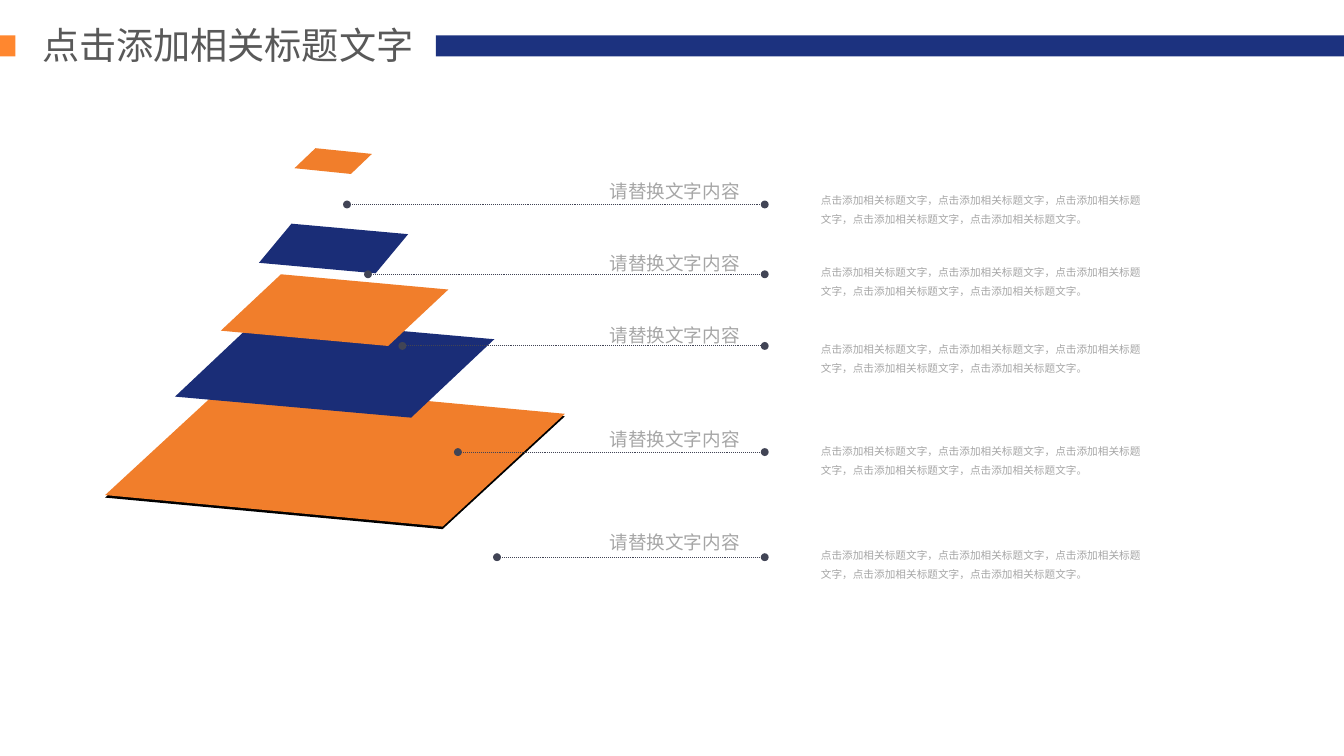
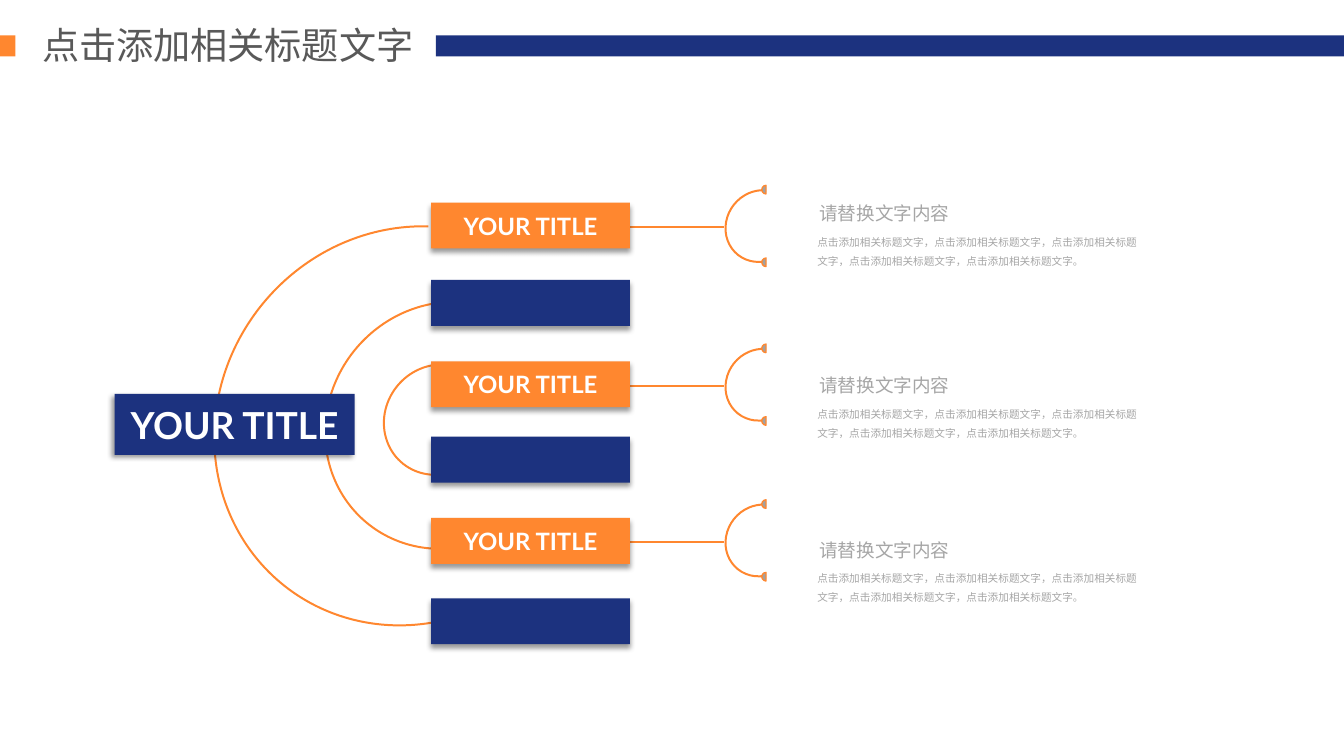
"""Build two slides: a stack of tiles with callouts and a branching title tree."""
from lxml import etree
from pptx import Presentation
from pptx.dml.color import RGBColor
from pptx.enum.dml import MSO_LINE
from pptx.enum.shapes import MSO_CONNECTOR, MSO_SHAPE
from pptx.enum.text import MSO_ANCHOR, MSO_AUTO_SIZE, PP_ALIGN
from pptx.oxml.ns import qn
from pptx.util import Inches, Pt

RECTANGLE, ARC, PIE = MSO_SHAPE.RECTANGLE, MSO_SHAPE.ARC, MSO_SHAPE.PIE
STRAIGHT, DOTTED = MSO_CONNECTOR.STRAIGHT, MSO_LINE.ROUND_DOT
LEFT, CENTER, RIGHT = PP_ALIGN.LEFT, PP_ALIGN.CENTER, PP_ALIGN.RIGHT
TOP, MIDDLE = MSO_ANCHOR.TOP, MSO_ANCHOR.MIDDLE
NO_FIT = MSO_AUTO_SIZE.NONE

COLORS = {
    "navy": "1C327F", "orange": "FF872F", "navy tile": "1A2D77", "orange tile": "F17E2B",
    "edge": "000000", "dots": "414455", "pin": "A1A1A1", "title": "595959",
    "text": "A6A6A6", "white": "FFFFFF",
}
CJK, LATIN, HEADING_FONT = "Noto Sans CJK SC", "Lato", "Arial"
TITLE = "点击添加相关标题文字"
HEADING = "请替换文字内容"
BODY = "，".join([TITLE] * 5) + "。"

deck = Presentation()
deck.slide_width, deck.slide_height = Inches(14.06), Inches(7.91)
COLUMN, ROW = deck.slide_width / 100, deck.slide_height / 100


def add_box(page, kind, left, top, width, height, fill=None, line=None, weight=1.5, shadow=None):
    """Place a shape, or a text box when kind is None, in percent of the slide."""
    area = [round(n) for n in (left * COLUMN, top * ROW, width * COLUMN, height * ROW)]
    if kind is None:
        return page.shapes.add_textbox(*area)
    box = page.shapes.add_shape(kind, *area)
    box.shadow.inherit = False
    if fill:
        box.fill.solid()
        box.fill.fore_color.rgb = RGBColor.from_string(COLORS[fill])
    else:
        box.fill.background()
    if line:
        box.line.color.rgb = RGBColor.from_string(COLORS[line])
        box.line.width = Pt(weight)
    else:
        box.line.fill.background()
    if shadow is not None:
        effects = box.element.spPr.find(qn("a:effectLst"))
        outer = etree.SubElement(effects, qn("a:outerShdw"), blurRad=str(Pt(4)), dist=str(Pt(3)),
                                 dir=str(shadow * 60000), algn="t", rotWithShape="0")
        color = etree.SubElement(outer, qn("a:srgbClr"), val=COLORS["edge"])
        etree.SubElement(color, qn("a:alpha"), val="40000")
    return box


def write(box, text, size, font, color, align=LEFT, spacing=1.0, anchor=TOP, bold=False, margin=0.1):
    """Write one formatted run into a box."""
    frame = box.text_frame
    frame.word_wrap, frame.auto_size, frame.vertical_anchor = True, NO_FIT, anchor
    frame.margin_left = frame.margin_right = Inches(margin)
    frame.margin_top = frame.margin_bottom = Inches(0.05)
    para = frame.paragraphs[0]
    para.alignment, para.line_spacing = align, spacing
    span = para.add_run()
    span.text = text
    span.font.size, span.font.name, span.font.bold = Pt(size), font, bold
    span.font.color.rgb = RGBColor.from_string(COLORS[color])


layout = deck.slide_layouts.get_by_name("Title Only")
stack_page, tree_page = [deck.slides.add_slide(layout) for _ in range(2)]

for left, width, color in [(32.43, 67.57, "navy"), (0, 1.14, "orange")]:
    band = add_box(stack_page, RECTANGLE, left, 4.68, width, 2.78, color)
    layout.shapes.element.append(band.element)

for page in deck.slides:
    title = page.shapes.title
    title.left, title.top = round(2.42 * COLUMN), round(2.28 * ROW)
    title.width, title.height = round(29.37 * COLUMN), round(7.2 * ROW)
    write(title, TITLE, 28, CJK, "title")

tiles = [
    (7.82, 65.82, 25.11, 4.17, 9.1, 14.92, "edge"),
    (7.82, 65.49, 25.11, 4.17, 9.1, 14.92, "orange tile"),
    (13.02, 52.47, 17.57, 2.78, 6.19, 10.37, "navy tile"),
    (16.43, 43.74, 12.45, 2.02, 4.48, 7.46, "orange tile"),
    (19.27, 34.77, 8.68, 1.39, 2.42, 5.18, "navy tile"),
    (21.91, 22.25, 4.2, 0.76, 1.56, 2.65, "orange tile"),
]
for left, top, across, drop, shift, rise, color in tiles:
    corners = [(left, top), (left + across, top + drop),
               (left + across + shift, top + drop - rise), (left + shift, top - rise)]
    points = [(round(x * COLUMN), round(y * ROW)) for x, y in corners]
    outline = stack_page.shapes.build_freeform(*points[0], scale=1.0)
    outline.add_line_segments(points[1:], close=True)
    tile = outline.convert_to_shape()
    tile.shadow.inherit = False
    tile.fill.solid()
    tile.fill.fore_color.rgb = RGBColor.from_string(COLORS[color])
    tile.line.fill.background()

callouts = [
    (25.82, 27.05, 22.63, 24.15),
    (27.38, 36.28, 32.11, 33.75),
    (29.94, 45.76, 41.59, 43.87),
    (34.07, 59.8, 55.37, 57.4),
    (36.98, 73.7, 69.03, 71.18),
]
for start, level, heading_top, body_top in callouts:
    leader = stack_page.shapes.add_connector(
        STRAIGHT, round(start * COLUMN), round(level * ROW), round(56.9 * COLUMN), round(level * ROW))
    leader.line.color.rgb = RGBColor.from_string(COLORS["dots"])
    leader.line.width, leader.line.dash_style = Pt(0.75), DOTTED
    for end in ("a:headEnd", "a:tailEnd"):
        etree.SubElement(leader.element.spPr.find(qn("a:ln")), qn(end), type="oval")
    heading = add_box(stack_page, None, 44.52, heading_top, 11.24, 4.8)
    write(heading, HEADING, 14, HEADING_FONT, "text", RIGHT, 1.2)
    body = add_box(stack_page, None, 60.38, body_top, 25.46, 6.32)
    write(body, BODY, 8, CJK, "text", spacing=1.5)

FORK_TOPS = [25.03, 46.02, 66.62]
arcs = [(16.29, 29.33, 28.59, 53.98), (24.4, 39.57, 17.71, 33.38), (28.66, 48.04, 7.89, 14.92)]
arcs += [(54.05, top, 5.12, 9.73) for top in FORK_TOPS]
for area in arcs:
    arc = add_box(tree_page, ARC, *area, line="orange")
    arc.rotation = 218.3
    arc.adjustments[0], arc.adjustments[1] = 134.3, 33.97

for top in FORK_TOPS:
    for offset in (-0.51, 9.1):
        pin = add_box(tree_page, PIE, 56.68, top + offset, 0.64, 1.14, "pin", "orange", 1)
        pin.adjustments[0], pin.adjustments[1] = 55.11, 162
    level = round((top + 5.06) * ROW)
    stem = tree_page.shapes.add_connector(
        STRAIGHT, round(46.87 * COLUMN), level, round(53.84 * COLUMN), level)
    stem.line.color.rgb = RGBColor.from_string(COLORS["orange"])
    stem.line.width = Pt(1.5)

for index, top in enumerate([26.8, 37.04, 47.79, 57.77, 68.52, 79.14]):
    color = "navy" if index % 2 else "orange"
    bar = add_box(tree_page, RECTANGLE, 32.08, top, 14.79, 6.07, color, shadow=90)
    if color == "orange":
        write(bar, "YOUR TITLE", 18, LATIN, "white", CENTER, anchor=MIDDLE, bold=True)
root = add_box(tree_page, RECTANGLE, 8.53, 52.09, 17.85, 8.09, "navy", shadow=135)
write(root, "YOUR TITLE", 28, LATIN, "white", CENTER, anchor=MIDDLE, bold=True)

for top in (25.54, 48.29, 70.04):
    body = add_box(tree_page, None, 60.17, top + 4.17, 25.75, 6.32)
    write(body, BODY, 8, CJK, "text", spacing=1.5, margin=0.09)
    heading = add_box(tree_page, None, 60.17, top, 18.92, 4.93)
    write(heading, HEADING, 14, HEADING_FONT, "text", spacing=1.2, margin=0.11)

for page in deck.slides:
    for latin in list(page.element.iter(qn("a:latin"))):
        latin.addnext(etree.Element(qn("a:ea"), typeface=LATIN))
    for connector in page.element.iter(qn("p:cxnSp")):
        etree.SubElement(connector.spPr, qn("a:effectLst"))

deck.save("out.pptx")
